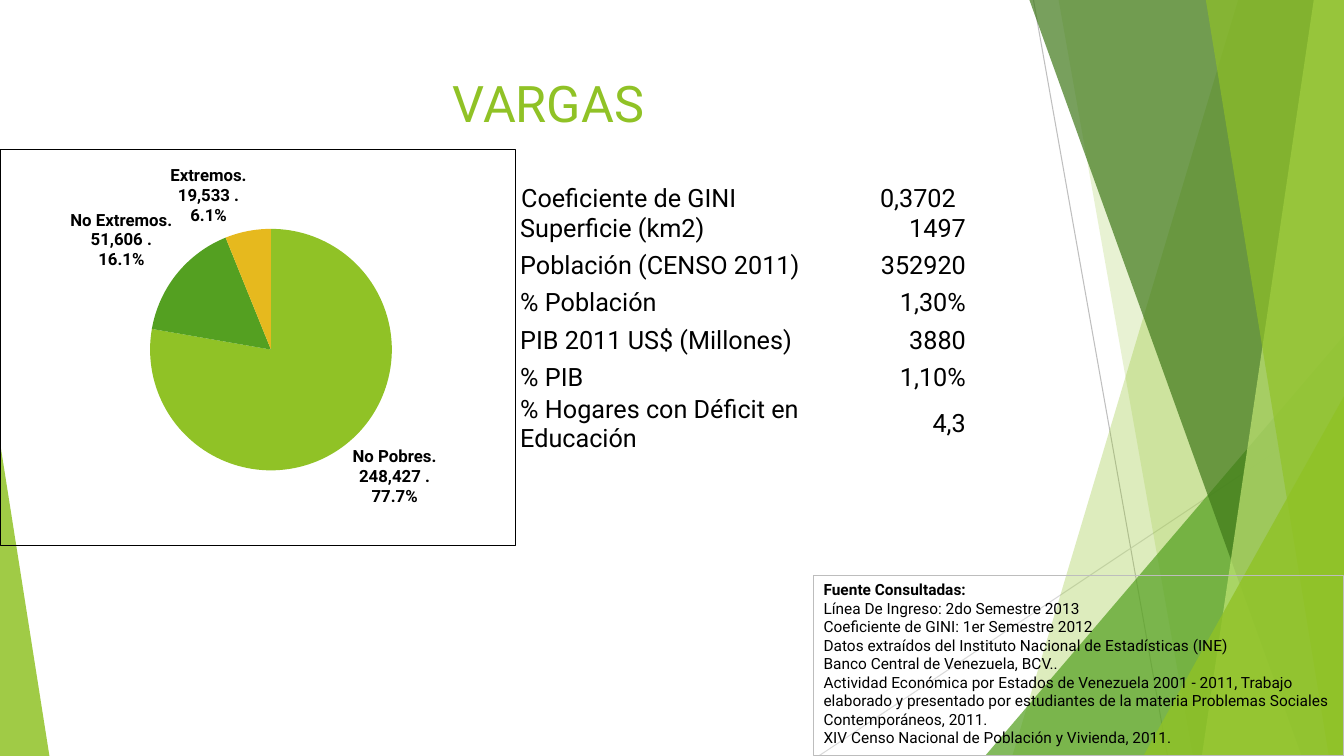
from dataclasses import dataclass

from lxml import etree
from pptx import Presentation
from pptx import util as u
from pptx.chart import data as chart_data
from pptx.dml.color import RGBColor
from pptx.enum import chart as chart_enum
from pptx.enum import shapes, text
from pptx.oxml import parse_xml
from pptx.oxml.ns import nsdecls, qn

PX = 9144


@dataclass(frozen=True)
class Theme:
    font: str = "Roboto"
    ink: str = "000000"
    white: str = "FFFFFF"
    lime: str = "90C226"
    green: str = "54A021"
    forest: str = "3F7819"
    pale: str = "C0E474"
    gold: str = "E6B91E"
    hairline: str = "BFBFBF"
    faint_hairline: str = "D9D9D9"
    frame: str = "BDBDBD"
    title_size: int = 36
    body_size: int = 18
    label_size: int = 12
    source_size: int = 11
    rule: float = 0.75


THEME = Theme()


@dataclass(frozen=True)
class Box:
    left: int
    top: int
    width: int
    height: int

    def emu(self) -> tuple[int, ...]:
        return tuple(v * PX for v in (self.left, self.top, self.width, self.height))


@dataclass(frozen=True)
class Ray:
    start: tuple[int, int]
    end: tuple[int, int]
    color: str


@dataclass(frozen=True)
class Band:
    top_left: int
    top_right: int
    bottom_right: int
    bottom_left: int
    color: str
    opacity: int


@dataclass(frozen=True)
class Wedge:
    box: Box
    apex: int
    color: str
    opacity: int


@dataclass(frozen=True)
class Poverty:
    group: str
    households: int
    color: str


@dataclass(frozen=True)
class Indicator:
    label: str
    value: str
    height: int


WIDTH, HEIGHT = 1333, 750
BACKDROP = [
    Ray((1025, 0), (1158, HEIGHT), THEME.hairline),
    Ray((WIDTH, 403), (812, HEIGHT), THEME.faint_hairline),
    Band(1228, WIDTH, WIDTH, 1004, THEME.lime, 30),
    Band(1050, WIDTH, WIDTH, 1183, THEME.lime, 20),
    Wedge(Box(977, 333, 356, 417), 1, THEME.green, 72),
    Band(1021, WIDTH, WIDTH, 1291, THEME.forest, 70),
    Band(1303, WIDTH, WIDTH, 1192, THEME.pale, 70),
    Band(1196, WIDTH, WIDTH, 1318, THEME.lime, 65),
    Wedge(Box(1134, 393, 199, 357), 1, THEME.lime, 80),
    Wedge(Box(0, 439, 49, 311), 0, THEME.lime, 85),
]
POVERTY = [
    Poverty("No Pobres", 248427, THEME.lime),
    Poverty("No Extremos", 51606, THEME.green),
    Poverty("Extremos", 19533, THEME.gold),
]
INDICATORS = [
    Indicator("Superficie (km2)", "1497", 22),
    Indicator("Población (CENSO 2011)", "352920", 43),
    Indicator("% Población", "1,30%", 22),
    Indicator("PIB 2011 US$ (Millones)", "3880", 43),
    Indicator("% PIB", "1,10%", 22),
    Indicator("% Hogares con Déficit en Educación", "4,3", 43),
]
SOURCES = [
    "Fuente Consultadas:",
    "Línea De Ingreso: 2do Semestre 2013",
    "Coeficiente de GINI: 1er Semestre 2012",
    "Datos extraídos del Instituto Nacional de Estadísticas (INE)",
    "Banco Central de Venezuela, BCV..",
    "Actividad Económica por Estados de Venezuela 2001 - 2011, Trabajo elaborado y "
    "presentado por estudiantes de la materia Problemas Sociales Contemporáneos, 2011.",
    "XIV Censo Nacional de Población y Vivienda, 2011.",
]


def style(font, size: int, color: str = THEME.ink, bold: bool = False) -> None:
    font.name, font.size, font.bold = THEME.font, u.Pt(size), bold
    font.color.rgb = RGBColor.from_string(color)


def draw_ray(slide, ray: Ray) -> None:
    ends = [v * PX for v in (*ray.start, *ray.end)]
    line = slide.shapes.add_connector(shapes.MSO_CONNECTOR.STRAIGHT, *ends)
    line.line.color.rgb = RGBColor.from_string(ray.color)
    line.line.width = u.Pt(THEME.rule)
    etree.SubElement(line.element.spPr, qn("a:effectLst"))


def draw_facet(slide, facet: Band | Wedge) -> None:
    if isinstance(facet, Band):
        outline = slide.shapes.build_freeform(facet.top_left, 0, scale=PX)
        outline.add_line_segments([(facet.top_right, 0), (facet.bottom_right, HEIGHT),
                                   (facet.bottom_left, HEIGHT)])
        shape = outline.convert_to_shape()
    else:
        shape = slide.shapes.add_shape(shapes.MSO_SHAPE.ISOSCELES_TRIANGLE, *facet.box.emu())
        shape.adjustments[0] = facet.apex
    shape.shadow.inherit = False
    shape.line.fill.background()
    shape.fill.solid()
    shape.fill.fore_color.rgb = RGBColor.from_string(facet.color)
    color = shape.element.spPr.find(qn("a:solidFill"))[0]
    etree.SubElement(color, qn("a:alpha"), val=str(facet.opacity * 1000))


def draw_title(slide) -> None:
    title = slide.shapes.title
    title.left, title.top, title.width, title.height = Box(74, 67, 940, 144).emu()
    frame = title.text_frame
    frame.text = "VARGAS"
    frame.auto_size = text.MSO_AUTO_SIZE.NONE
    frame.vertical_anchor = text.MSO_ANCHOR.TOP
    frame.paragraphs[0].alignment = text.PP_ALIGN.CENTER
    style(frame.paragraphs[0].font, THEME.title_size, THEME.lime)


def draw_gini(slide) -> None:
    frame = slide.shapes.add_textbox(*Box(507, 176, 521, 40).emu()).text_frame
    frame.word_wrap = True
    gini = frame.paragraphs[0]
    gini.text = "Coeficiente de GINI\t0,3702"
    style(gini.font, THEME.body_size)
    tabs = parse_xml(f'<a:tabLst {nsdecls("a")}><a:tab pos="{356 * PX}" algn="l"/></a:tabLst>')
    gini.font._element.addprevious(tabs)


def draw_poverty(slide) -> None:
    data = chart_data.CategoryChartData(number_format="#,##0_ ")
    data.categories = [p.group for p in POVERTY]
    data.add_series("Series 1", [p.households for p in POVERTY])
    pie = slide.shapes.add_chart(chart_enum.XL_CHART_TYPE.PIE, *Box(0, 148, 512, 394).emu(), data).chart
    pie.has_legend = pie.has_title = False
    style(pie.font, 10)
    pie.plots[0].vary_by_categories = True
    households = pie.plots[0].series[0]
    for i, group in enumerate(POVERTY):
        fill = households.points[i].format.fill
        fill.solid()
        fill.fore_color.rgb = RGBColor.from_string(group.color)
    labels = households.data_labels
    labels.show_value = labels.show_percentage = labels.show_category_name = True
    labels.number_format, labels.number_format_is_linked = "0.0%", False
    labels.position = chart_enum.XL_LABEL_POSITION.OUTSIDE_END
    style(labels.font, THEME.label_size, bold=True)
    separator = parse_xml(f'<c:separator {nsdecls("c")}>.\n</c:separator>')
    households._element.find(f'{qn("c:dLbls")}/{qn("c:showBubbleSize")}').addnext(separator)
    plot_area = pie.element.find(f'{qn("c:chart")}/{qn("c:plotArea")}')
    for old in plot_area.findall(qn("c:layout")):
        plot_area.remove(old)
    place = "".join(f'<c:{k} val="{v}"/>' for k, v in
                    (("layoutTarget", "inner"), ("xMode", "edge"), ("yMode", "edge"),
                     ("x", 0.29), ("y", 0.2), ("w", 0.47), ("h", 0.61)))
    plot_area.insert(0, parse_xml(
        f'<c:layout {nsdecls("c")}><c:manualLayout>{place}</c:manualLayout></c:layout>'))
    pie.element.find(qn("c:chart")).addnext(parse_xml(
        f'<c:spPr {nsdecls("c", "a")}><a:noFill/><a:ln w="{u.Pt(THEME.rule)}"><a:solidFill>'
        f'<a:srgbClr val="{THEME.ink}"/></a:solidFill></a:ln></c:spPr>'))


def fill_cell(cell, words: str, alignment: text.PP_ALIGN) -> None:
    cell.text = words
    cell.margin_left = cell.margin_top = cell.margin_right = PX
    cell.margin_bottom = 0
    cell.vertical_anchor = text.MSO_ANCHOR.MIDDLE
    cell.text_frame.paragraphs[0].alignment = alignment
    style(cell.text_frame.paragraphs[0].font, THEME.body_size)
    for i, side in enumerate(("lnL", "lnR", "lnT", "lnB")):
        cell._tc.get_or_add_tcPr().insert(i, parse_xml(
            f'<a:{side} {nsdecls("a")} w="{u.Pt(1)}"><a:solidFill>'
            f'<a:srgbClr val="{THEME.white}"/></a:solidFill></a:{side}>'))
    cell.fill.background()


def draw_indicators(slide) -> None:
    box = Box(515, 211, 444, sum(i.height for i in INDICATORS))
    table = slide.shapes.add_table(len(INDICATORS), 2, *box.emu()).table
    table.first_row = table.horz_banding = False
    for column, width in zip(table.columns, (282, 162)):
        column.width = width * PX
    for row, indicator in zip(table.rows, INDICATORS):
        row.height = indicator.height * PX
        fill_cell(row.cells[0], indicator.label, text.PP_ALIGN.LEFT)
        fill_cell(row.cells[1], indicator.value, text.PP_ALIGN.RIGHT)


def draw_sources(slide) -> None:
    panel = slide.shapes.add_shape(shapes.MSO_SHAPE.RECTANGLE, *Box(807, 571, 526, 179).emu())
    panel.shadow.inherit = False
    panel.fill.background()
    panel.line.color.rgb = RGBColor.from_string(THEME.frame)
    panel.line.width = u.Pt(THEME.rule)
    frame = panel.text_frame
    frame.word_wrap = True
    frame.vertical_anchor = text.MSO_ANCHOR.TOP
    frame.text = "\n".join(SOURCES)
    for i, source in enumerate(frame.paragraphs):
        source.alignment = text.PP_ALIGN.LEFT
        style(source.font, THEME.source_size, bold=i == 0)


def main() -> None:
    deck = Presentation()
    deck.slide_width, deck.slide_height = WIDTH * PX, HEIGHT * PX
    slide = deck.slides.add_slide(deck.slide_layouts[5])
    for part in BACKDROP:
        draw_ray(slide, part) if isinstance(part, Ray) else draw_facet(slide, part)
    for draw in (draw_title, draw_gini, draw_poverty, draw_indicators, draw_sources):
        draw(slide)
    deck.save("out.pptx")


if __name__ == "__main__":
    main()
